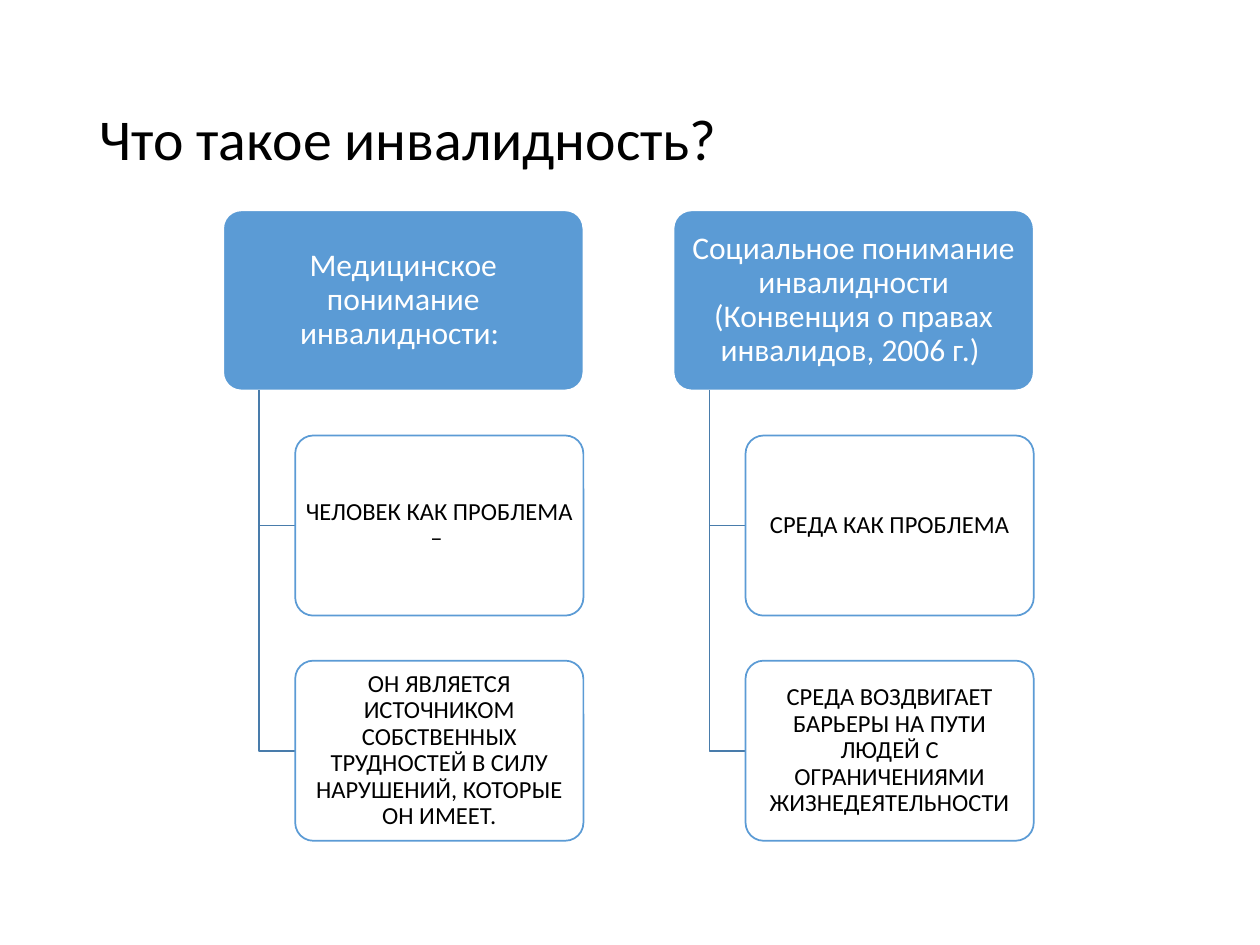
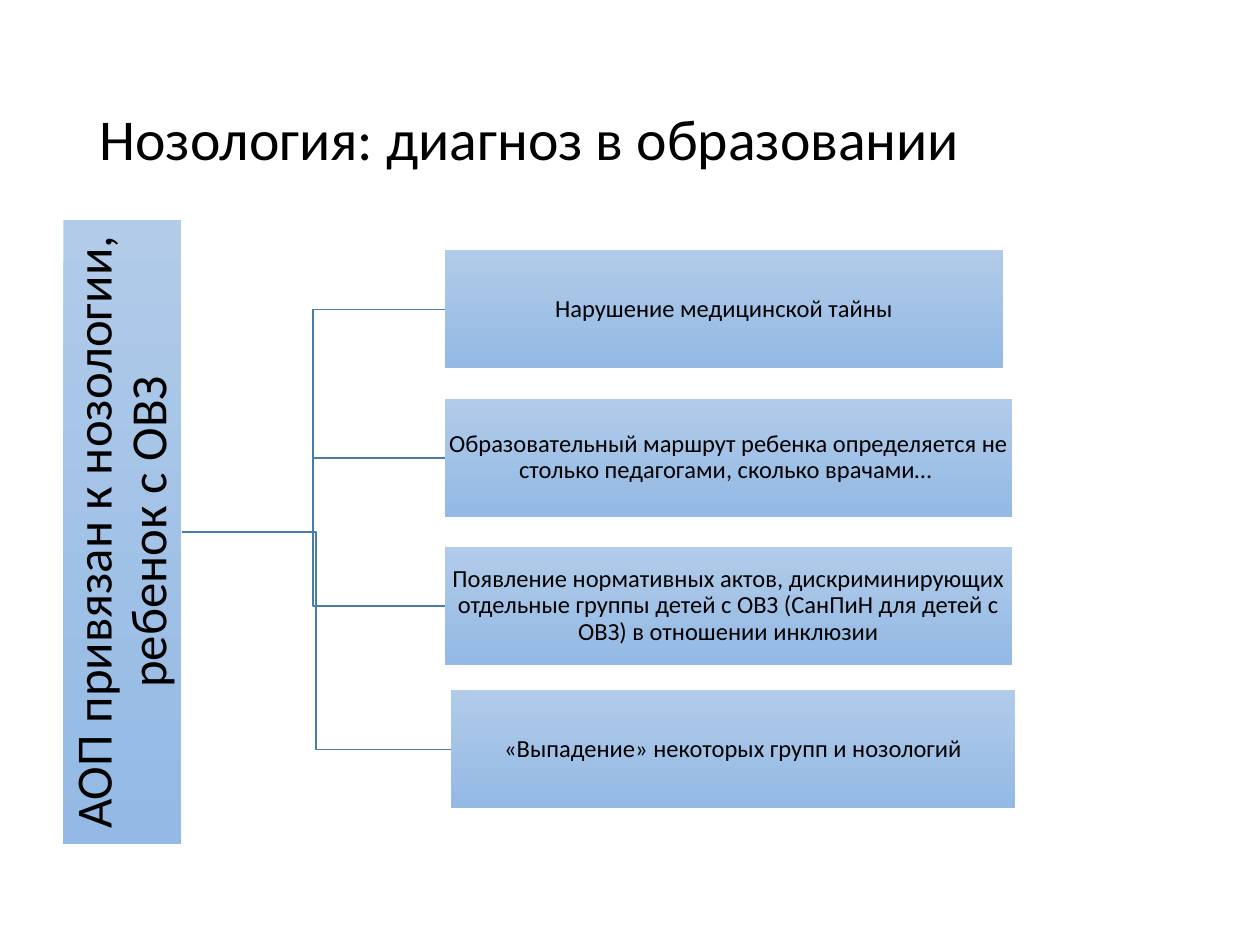
from dataclasses import dataclass

from lxml import etree
from pptx import Presentation
from pptx.dml.color import RGBColor
from pptx.enum.shapes import MSO_SHAPE
from pptx.enum.text import MSO_ANCHOR, MSO_AUTO_SIZE, PP_ALIGN
from pptx.oxml.ns import qn
from pptx.util import Cm, Pt

RECT, ROUND = MSO_SHAPE.RECTANGLE, MSO_SHAPE.ROUNDED_RECTANGLE
MIDDLE = MSO_ANCHOR.MIDDLE
LEFT, CENTER = PP_ALIGN.LEFT, PP_ALIGN.CENTER
NO_AUTOFIT = MSO_AUTO_SIZE.NONE
TITLE_ONLY = 5


@dataclass(frozen=True)
class Theme:
    """Colours, font and type sizes shared by the slides."""
    font: str = "Calibri"
    ink: str = "000000"
    paper: str = "FFFFFF"
    accent: str = "5B9BD5"
    link: str = "497CAB"
    grad_top: str = "B1CBE9"
    grad_bottom: str = "93B9E4"
    title_size: float = 33
    root_size: float = 29
    head_size: float = 18
    body_size: float = 14
    line: float = 1
    spacing: float = 0.9


@dataclass(frozen=True)
class Box:
    """A rectangle measured in centimetres."""
    x: float
    y: float
    w: float
    h: float

    @property
    def right(self):
        """Return the right edge."""
        return self.x + self.w

    @property
    def bottom(self):
        """Return the bottom edge."""
        return self.y + self.h

    @property
    def mid_y(self):
        """Return the vertical centre."""
        return self.y + self.h / 2

    def lengths(self):
        """Return left, top, width and height as lengths."""
        return [Cm(v) for v in (self.x, self.y, self.w, self.h)]


THEME = Theme()
TITLE_BOX = Box(1.75, 1.02, 21.9, 3.68)

MODELS_BOX = Box(4.5, 4.24, 16.34, 12.7)
MODELS = [
    ("Медицинское понимание инвалидности: ",
     ["ЧЕЛОВЕК КАК ПРОБЛЕМА – ",
      "ОН ЯВЛЯЕТСЯ ИСТОЧНИКОМ СОБСТВЕННЫХ ТРУДНОСТЕЙ В СИЛУ НАРУШЕНИЙ, "
      "КОТОРЫЕ ОН ИМЕЕТ."]),
    ("Социальное понимание инвалидности (Конвенция о правах инвалидов, 2006 г.) ",
     ["СРЕДА КАК ПРОБЛЕМА",
      "СРЕДА ВОЗДВИГАЕТ БАРЬЕРЫ НА ПУТИ ЛЮДЕЙ С ОГРАНИЧЕНИЯМИ "
      "ЖИЗНЕДЕЯТЕЛЬНОСТИ"]),
]

TREE_BOX = Box(1.28, 4.44, 19.19, 12.57)
ROOT_TEXT = "АОП привязан к нозологии, ребенок с ОВЗ"
CONSEQUENCES = [
    ("Нарушение медицинской тайны", 7.69, 0.61, 11.25),
    ("Образовательный маршрут ребенка определяется не столько педагогами, "
     "сколько врачами… ", 7.69, 3.6, 11.43),
    ("Появление нормативных актов, дискриминирующих отдельные группы детей с ОВЗ "
     "(СанПиН для детей с ОВЗ) в отношении инклюзии", 7.69, 6.58, 11.43),
    ("«Выпадение» некоторых групп и нозологий", 7.81, 9.48, 11.38),
]


def rgb(value):
    """Return a colour from its hex value."""
    return RGBColor.from_string(value)


def write(shape, text, size, color, align=CENTER, margins=None):
    """Put one styled paragraph into a shape."""
    tf = shape.text_frame
    tf.text = text
    tf.word_wrap = True
    tf.auto_size = NO_AUTOFIT
    tf.vertical_anchor = MIDDLE
    if margins:
        tf.margin_left = tf.margin_right = Cm(margins[0])
        tf.margin_top = tf.margin_bottom = Cm(margins[1])
    p = tf.paragraphs[0]
    p.alignment = align
    p.line_spacing = THEME.spacing
    p.font.name = THEME.font
    p.font.size = Pt(size)
    p.font.bold = False
    p.font.color.rgb = rgb(color)


def outline(shape, color):
    """Give a shape the common line and no shadow."""
    shape.shadow.inherit = False
    shape.line.color.rgb = rgb(color)
    shape.line.width = Pt(THEME.line)


def add_elbow(slide, points):
    """Draw an open polyline through points in centimetres."""
    start, *rest = [(Cm(x), Cm(y)) for x, y in points]
    builder = slide.shapes.build_freeform(*start)
    builder.add_line_segments(rest, close=False)
    s = builder.convert_to_shape()
    s.fill.background()
    outline(s, THEME.link)


def add_card(slide, box, text, size, color, fill, line, margins):
    """Add a rounded card with a solid fill."""
    s = slide.shapes.add_shape(ROUND, *box.lengths())
    s.adjustments[0] = 0.1
    s.fill.solid()
    s.fill.fore_color.rgb = rgb(fill)
    outline(s, line)
    write(s, text, size, color, margins=margins)
    return s


def add_panel(slide, box, text, size, margin):
    """Add a borderless rectangle with a vertical gradient."""
    s = slide.shapes.add_shape(RECT, *box.lengths())
    s.shadow.inherit = False
    s.line.fill.background()
    s.fill.gradient()
    s.fill.gradient_angle = 270
    for stop, color in zip(s.fill.gradient_stops, (THEME.grad_top, THEME.grad_bottom)):
        stop.color.rgb = rgb(color)
    write(s, text, size, THEME.ink, margins=(margin, margin))
    return s


def add_model(slide, box, heading, items):
    """Draw a heading card with its items hanging below."""
    w, h = box.w, box.w / 2
    head = Box(box.x, box.y, w, h)
    add_card(slide, head, heading, THEME.head_size, THEME.paper,
             THEME.accent, THEME.paper, (0.1, 0.07))
    trunk = box.x + w * 0.1
    for i, text in enumerate(items, 1):
        item = Box(box.x + w * 0.2, box.y + i * h * 1.25, w * 0.8, h)
        add_elbow(slide, [(trunk, head.bottom), (trunk, item.mid_y), (item.x, item.mid_y)])
        s = add_card(slide, item, text, THEME.body_size, THEME.ink,
                     THEME.paper, THEME.accent, (0.07, 0.05))
        color = s._element.spPr.find(qn("a:solidFill"))[0]
        etree.SubElement(color, qn("a:alpha"), val="90000")


def add_models(slide, box):
    """Place the models side by side with a quarter-width gap."""
    w = box.w / (1.25 * len(MODELS) - 0.25)
    for i, (heading, items) in enumerate(MODELS):
        add_model(slide, Box(box.x + i * w * 1.25, box.y, w, box.h), heading, items)


def add_tree(slide, box):
    """Draw an upright root panel linked to its consequences."""
    thickness = 2.38
    root = Box(box.x, box.y, thickness, box.h)
    leaves = [(text, Box(box.x + dx, box.y + dy, w, thickness))
              for text, dx, dy, w in CONSEQUENCES]
    for _, leaf in reversed(leaves):
        bend = (root.right + leaf.x) / 2
        add_elbow(slide, [(root.right, root.mid_y), (bend, root.mid_y),
                          (bend, leaf.mid_y), (leaf.x, leaf.mid_y)])
    s = add_panel(slide, root, ROOT_TEXT, THEME.root_size, 0.05)
    s.text_frame._txBody.bodyPr.set("vert", "vert270")
    for text, leaf in leaves:
        add_panel(slide, leaf, text, THEME.body_size, 0.03)


def add_titled_slide(prs, text):
    """Add a slide with a formatted title."""
    slide = prs.slides.add_slide(prs.slide_layouts[TITLE_ONLY])
    title = slide.shapes.title
    title.left, title.top, title.width, title.height = TITLE_BOX.lengths()
    write(title, text, THEME.title_size, THEME.ink, align=LEFT)
    return slide


def main():
    """Build and save the presentation."""
    prs = Presentation()
    prs.slide_width, prs.slide_height = Cm(25.4), Cm(19.05)
    add_models(add_titled_slide(prs, "Что такое инвалидность?"), MODELS_BOX)
    add_tree(add_titled_slide(prs, "Нозология: диагноз в образовании"), TREE_BOX)
    prs.save("out.pptx")


if __name__ == "__main__":
    main()
